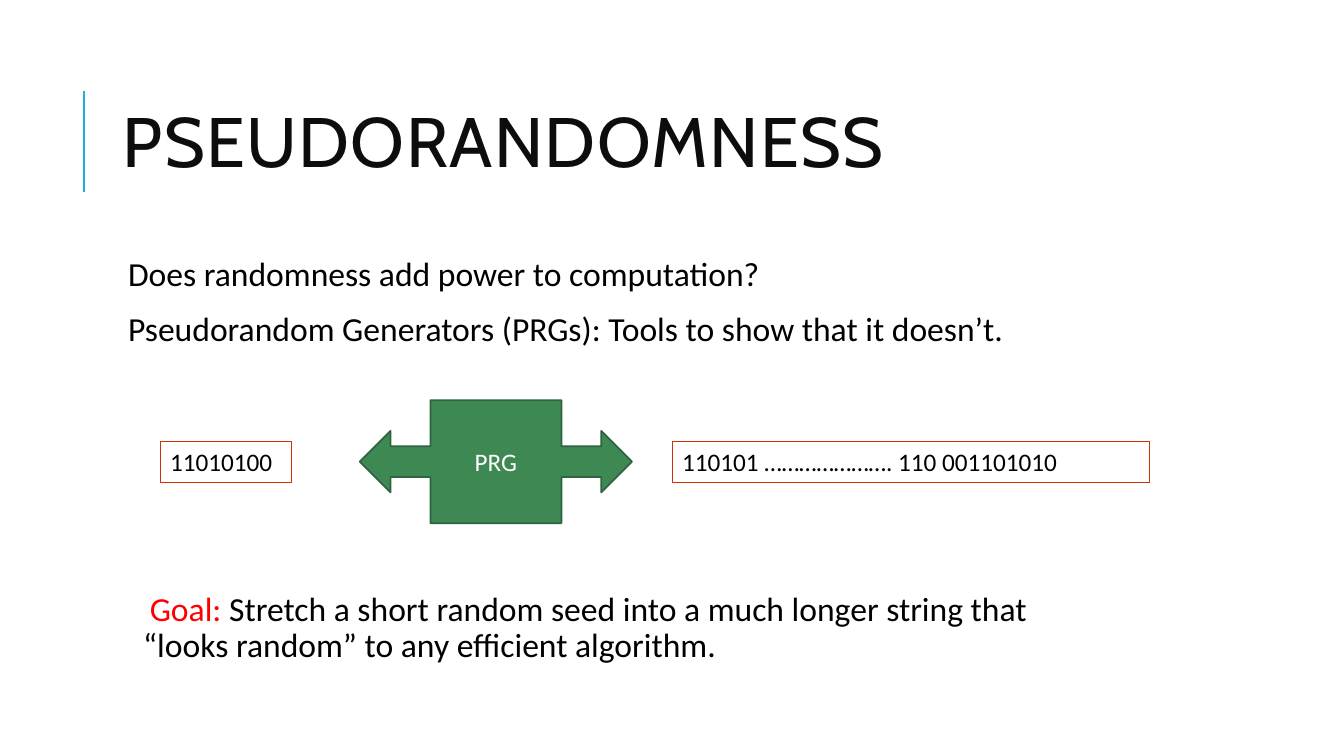
from dataclasses import dataclass

import lxml.etree
import pptx
import pptx.dml.color
import pptx.enum.shapes
import pptx.enum.text
import pptx.oxml.ns
import pptx.shapes.base
import pptx.shapes.shapetree
import pptx.text.text
import pptx.util

Pt = pptx.util.Pt
RGB = pptx.dml.color.RGBColor.from_string
qn = pptx.oxml.ns.qn
Anchor = pptx.enum.text.MSO_ANCHOR
AutoSize = pptx.enum.text.MSO_AUTO_SIZE
Align = pptx.enum.text.PP_ALIGN


@dataclass(frozen=True)
class Theme:
    heading_font: str = "Cabin"
    text_font: str = "Calibri"
    title_size: float = 50
    body_size: float = 24
    label_size: float = 18
    title: str = "0D0D0D"
    text: str = "000000"
    accent: str = "1CADE4"
    goal: str = "FF0000"
    generator: str = "3E8853"
    generator_edge: str = "2E653D"
    generator_text: str = "FFFFFF"
    string_edge: str = "CC3300"


@dataclass(frozen=True)
class Box:
    left: float
    top: float
    width: float
    height: float

    def lengths(self) -> tuple[int, int, int, int]:
        return Pt(self.left), Pt(self.top), Pt(self.width), Pt(self.height)


@dataclass(frozen=True)
class Span:
    text: str
    color: str


@dataclass(frozen=True)
class BitString:
    bits: str
    box: Box


THEME = Theme()
TITLE_BOX = Box(80.64, 46.08, 765.36, 118.08)
QUESTION_BOX = Box(80.64, 180, 692.64, 91.44)
GOAL_BOX = Box(91.44, 419.76, 692.64, 91.44)
GENERATOR_BOX = Box(257.04, 285.84, 194.4, 87.84)
BIT_STRINGS = [
    BitString("11010100", Box(114.48, 315.36, 93.6, 29.16)),
    BitString("110101 …………………. 110 001101010", Box(480.24, 315.36, 340.56, 29.16)),
]
QUESTIONS = [
    [Span("Does randomness add power to computation?", THEME.text)],
    [Span("Pseudorandom Generators (PRGs): Tools to show that it doesn’t.", THEME.text)],
]
GOAL = [[
    Span("Goal:", THEME.goal),
    Span(
        " Stretch a short random seed into a much longer string that "
        "“looks random” to any efficient algorithm.",
        THEME.text,
    ),
]]


def place(shape: pptx.shapes.base.BaseShape, box: Box) -> None:
    shape.left, shape.top, shape.width, shape.height = box.lengths()


def add_span(
    paragraph: pptx.text.text._Paragraph, span: Span, size: float, font: str = THEME.text_font
) -> pptx.text.text._Run:
    run = paragraph.add_run()
    run.text = span.text
    run.font.name = font
    run.font.size = Pt(size)
    run.font.color.rgb = RGB(span.color)
    return run


def write_statements(frame: pptx.text.text.TextFrame, statements: list[list[Span]]) -> None:
    frame.word_wrap = True
    frame.auto_size = AutoSize.NONE
    frame.vertical_anchor = Anchor.TOP
    frame.margin_left = frame.margin_right = Pt(3.6)
    frame.margin_top = frame.margin_bottom = Pt(3.6)
    for index, spans in enumerate(statements):
        paragraph = frame.add_paragraph() if index else frame.paragraphs[0]
        paragraph.alignment = Align.LEFT
        paragraph.line_spacing = 0.9
        paragraph.space_before = Pt(12)
        paragraph.space_after = Pt(2)
        properties = paragraph._p.get_or_add_pPr()
        properties.set("marL", str(Pt(7.2)))
        properties.set("indent", str(-Pt(7.2)))
        bullet_color = lxml.etree.SubElement(properties, qn("a:buClr"))
        lxml.etree.SubElement(bullet_color, qn("a:srgbClr"), val=THEME.accent)
        lxml.etree.SubElement(properties, qn("a:buChar"), char=" ")
        for span in spans:
            add_span(paragraph, span, THEME.body_size)


def write_title(title: pptx.shapes.base.BaseShape) -> None:
    place(title, TITLE_BOX)
    frame = title.text_frame
    frame.auto_size = AutoSize.NONE
    frame.vertical_anchor = Anchor.MIDDLE
    paragraph = frame.paragraphs[0]
    paragraph.alignment = Align.LEFT
    paragraph.line_spacing = 0.8
    run = add_span(
        paragraph, Span("PSEUDORANDOMNESS", THEME.title), THEME.title_size, THEME.heading_font
    )
    run.font._element.set("spc", "100")


def draw_title_rule(shapes: pptx.shapes.shapetree.SlideShapes) -> None:
    rule = shapes.add_connector(
        pptx.enum.shapes.MSO_CONNECTOR.STRAIGHT, Pt(60), Pt(136.8), Pt(60), Pt(64.8)
    )
    rule.line.color.rgb = RGB(THEME.accent)
    rule.line.width = Pt(1.5)
    lxml.etree.SubElement(rule._element.spPr, qn("a:effectLst"))


def draw_generator(shapes: pptx.shapes.shapetree.SlideShapes) -> None:
    generator = shapes.add_shape(
        pptx.enum.shapes.MSO_SHAPE.LEFT_RIGHT_ARROW_CALLOUT, *GENERATOR_BOX.lengths()
    )
    generator.shadow.inherit = False
    generator.fill.solid()
    generator.fill.fore_color.rgb = RGB(THEME.generator)
    generator.line.color.rgb = RGB(THEME.generator_edge)
    generator.line.width = Pt(1.25)
    generator.text_frame.vertical_anchor = Anchor.MIDDLE
    paragraph = generator.text_frame.paragraphs[0]
    paragraph.alignment = Align.CENTER
    add_span(paragraph, Span("PRG", THEME.generator_text), THEME.label_size)


def draw_bit_string(shapes: pptx.shapes.shapetree.SlideShapes, bit_string: BitString) -> None:
    label = shapes.add_textbox(*bit_string.box.lengths())
    label.line.color.rgb = RGB(THEME.string_edge)
    label.line.width = Pt(0.75)
    label.text_frame.word_wrap = True
    label.text_frame.auto_size = AutoSize.SHAPE_TO_FIT_TEXT
    add_span(label.text_frame.paragraphs[0], Span(bit_string.bits, THEME.text), THEME.label_size)


def main() -> None:
    deck = pptx.Presentation()
    deck.slide_width, deck.slide_height = Pt(960), Pt(540)
    slide = deck.slides.add_slide(deck.slide_layouts[1])
    draw_title_rule(slide.shapes)
    write_title(slide.shapes.title)
    questions = slide.placeholders[1]
    place(questions, QUESTION_BOX)
    write_statements(questions.text_frame, QUESTIONS)
    draw_generator(slide.shapes)
    for bit_string in BIT_STRINGS:
        draw_bit_string(slide.shapes, bit_string)
    write_statements(slide.shapes.add_textbox(*GOAL_BOX.lengths()).text_frame, GOAL)
    deck.save("out.pptx")


if __name__ == "__main__":
    main()
